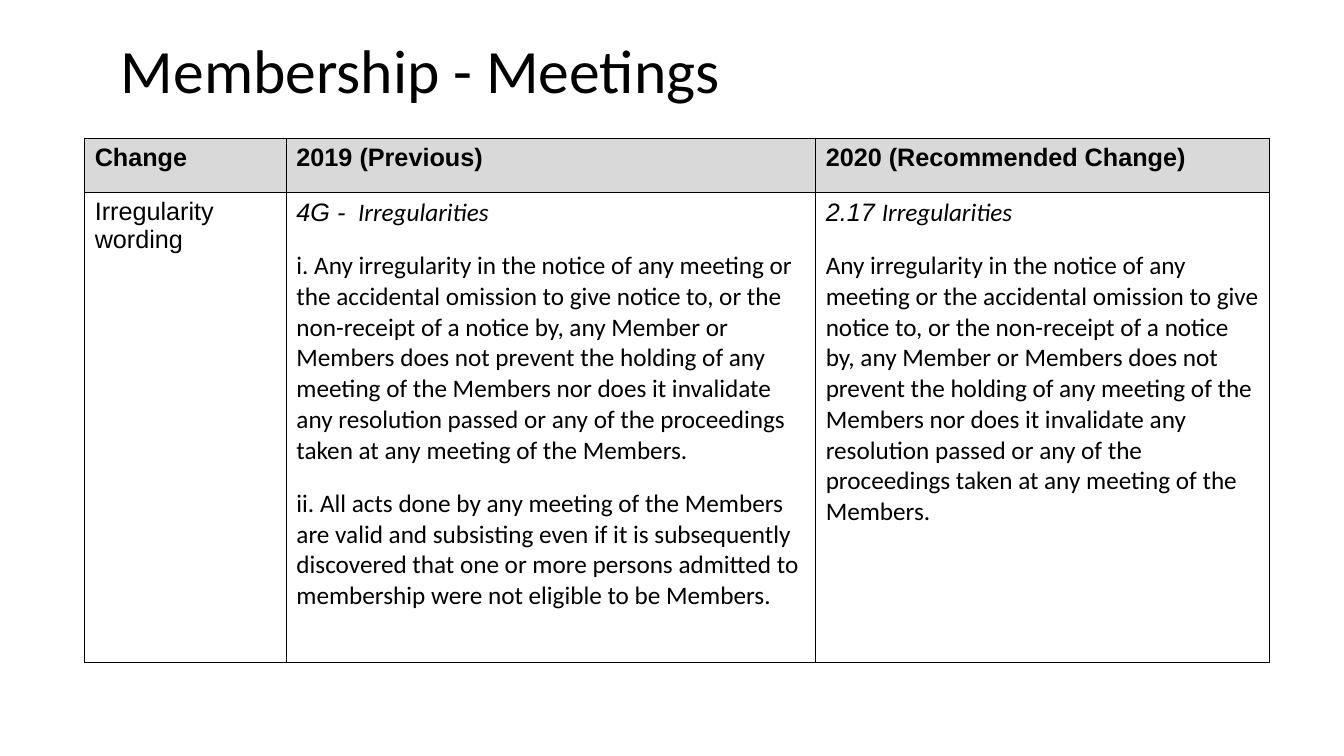
from dataclasses import dataclass

from lxml.etree import SubElement
from pptx import Presentation
from pptx.dml.color import RGBColor as Color
from pptx.enum.text import MSO_ANCHOR as Anchor
from pptx.oxml.ns import qn
from pptx.util import Inches, Pt


@dataclass(frozen=True)
class Theme:
    ink: str = "000000"
    header_fill: str = "D9D9D9"
    body_fill: str = "FFFFFF"
    table_font: str = "Arial"
    text_font: str = "Calibri"
    title_size: int = 44
    text_size: int = 18
    paragraph_gap: int = 16
    border_width: int = 1


THEME = Theme()
SLIDE_SIZE = (13.33, 7.5)
TITLE_BOX = (1.1, 0, 11.5, 1.45)
TABLE_ORIGIN = (0.84, 1.37)
COLUMN_WIDTHS = (2, 5.25, 4.5)
ROW_HEIGHTS = (0.54, 4.66)

PLAIN = {"name": THEME.table_font, "size": Pt(THEME.text_size), "bold": False}
HEADING = PLAIN | {"bold": True}
CLAUSE_NUMBER = PLAIN | {"italic": True}
CLAUSE_NAME = CLAUSE_NUMBER | {"name": THEME.text_font}
CLAUSE_TEXT = PLAIN | {"name": THEME.text_font}
TITLE = {"name": THEME.text_font, "size": Pt(THEME.title_size)}

IRREGULARITY = (
    "ny irregularity in the notice of any meeting or the accidental omission "
    "to give notice to, or the non-receipt of a notice by, any Member or Members "
    "does not prevent the holding of any meeting of the Members nor does it "
    "invalidate any resolution passed or any of the proceedings taken at any "
    "meeting of the Members."
)
IRREGULARITY = "A" + IRREGULARITY
VALID_ACTS = (
    "ii. All acts done by any meeting of the Members are valid and subsisting even "
    "if it is subsequently discovered that one or more persons admitted to "
    "membership were not eligible to be Members."
)

# Each cell is a list of paragraphs, each paragraph a list of (text, format).
HEADER_ROW = [
    [[(label, HEADING)]]
    for label in ("Change", "2019 (Previous)", "2020 (Recommended Change)")
]
CHANGE_ROW = [
    [[("Irregularity wording", PLAIN)]],
    [
        [("4G - ", CLAUSE_NUMBER), (" Irregularities", CLAUSE_NAME)],
        [("i. " + IRREGULARITY, CLAUSE_TEXT)],
        [(VALID_ACTS, CLAUSE_TEXT)],
    ],
    [
        [("2.17 ", CLAUSE_NUMBER), ("Irregularities", CLAUSE_NAME)],
        [(IRREGULARITY, CLAUSE_TEXT)],
    ],
]


def write_paragraphs(frame, paragraphs):
    for index, pieces in enumerate(paragraphs):
        para = frame.add_paragraph() if index else frame.paragraphs[0]
        para.space_before = Pt(THEME.paragraph_gap if index else 0)
        for text, text_format in pieces:
            span = para.add_run()
            span.text = text
            span.font.color.rgb = Color.from_string(THEME.ink)
            for name, value in text_format.items():
                setattr(span.font, name, value)


def add_title(page, text):
    box = page.shapes.add_textbox(*map(Inches, TITLE_BOX))
    frame = box.text_frame
    frame.word_wrap = True
    frame.vertical_anchor = Anchor.MIDDLE
    write_paragraphs(frame, [[(text, TITLE)]])
    frame.paragraphs[0].line_spacing = 0.9


def outline_cell(cell):
    """Draw all four borders; call before filling, as the schema wants lines first."""
    properties = cell._tc.get_or_add_tcPr()
    for side in ("a:lnL", "a:lnR", "a:lnT", "a:lnB"):
        line = SubElement(properties, qn(side), w=str(Pt(THEME.border_width)))
        fill = SubElement(line, qn("a:solidFill"))
        SubElement(fill, qn("a:srgbClr"), val=THEME.ink)


def fill_cell(cell, paragraphs, color):
    outline_cell(cell)
    cell.fill.solid()
    cell.fill.fore_color.rgb = Color.from_string(color)
    write_paragraphs(cell.text_frame, paragraphs)


def add_comparison_table(page, rows, row_fills):
    size = (sum(COLUMN_WIDTHS), sum(ROW_HEIGHTS))
    table = page.shapes.add_table(
        len(rows), len(COLUMN_WIDTHS), *map(Inches, TABLE_ORIGIN + size)
    ).table
    table.first_row = table.horz_banding = False
    for column, width in zip(table.columns, COLUMN_WIDTHS):
        column.width = Inches(width)
    for row, height, contents, color in zip(table.rows, ROW_HEIGHTS, rows, row_fills):
        row.height = Inches(height)
        for cell, paragraphs in zip(row.cells, contents):
            fill_cell(cell, paragraphs, color)


def main():
    deck = Presentation()
    deck.slide_width, deck.slide_height = map(Inches, SLIDE_SIZE)
    page = deck.slides.add_slide(deck.slide_layouts[6])
    add_comparison_table(
        page, [HEADER_ROW, CHANGE_ROW], [THEME.header_fill, THEME.body_fill]
    )
    add_title(page, "Membership - Meetings")
    deck.save("out.pptx")


if __name__ == "__main__":
    main()
